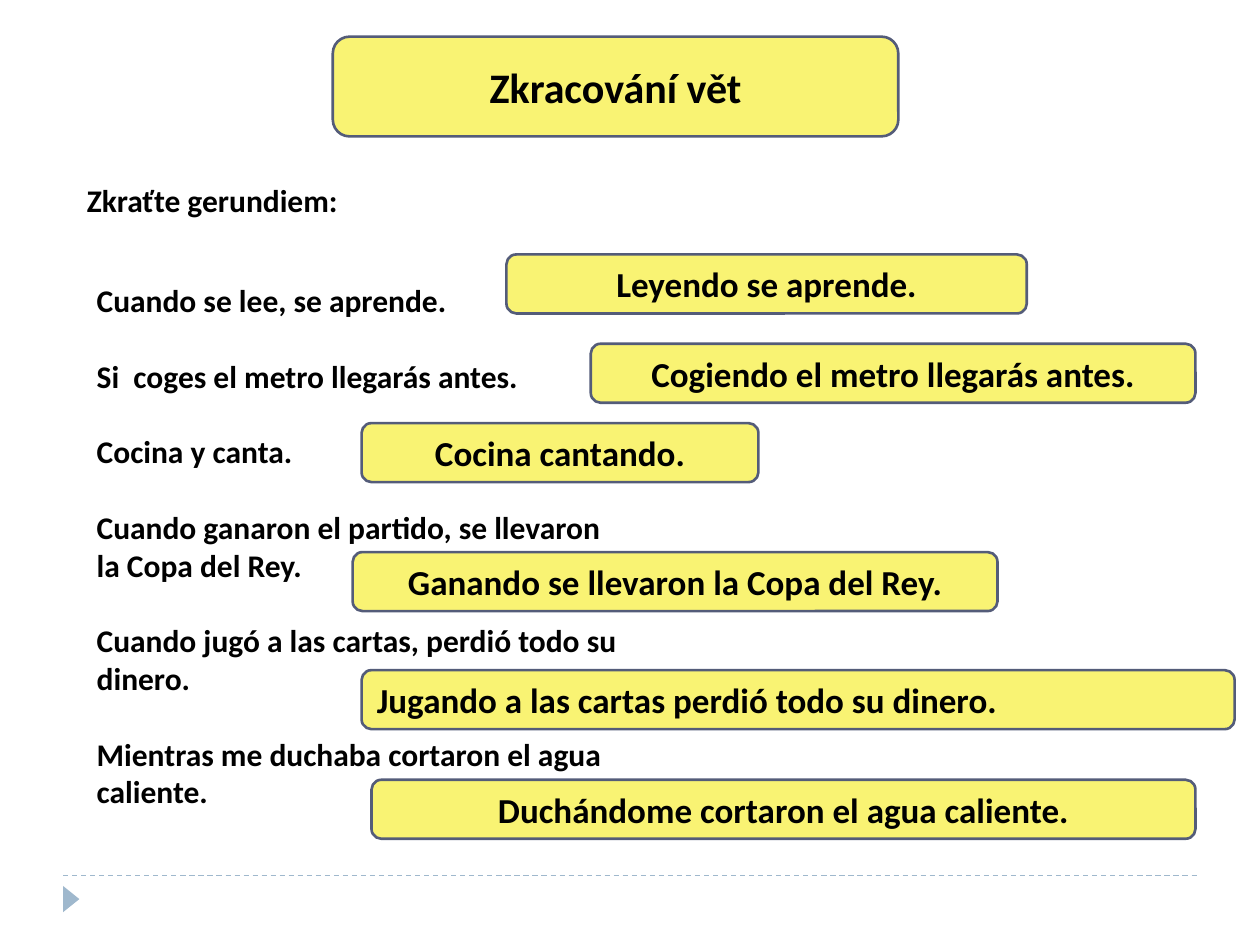
"""Build the slide on shortening Spanish sentences with the gerund."""
from lxml.etree import SubElement
from pptx import Presentation
from pptx.dml.color import RGBColor
from pptx.enum.dml import MSO_LINE
from pptx.enum.shapes import MSO_CONNECTOR, MSO_SHAPE
from pptx.enum.text import MSO_ANCHOR as Anchor, PP_ALIGN as Align
from pptx.oxml.ns import qn
from pptx.util import Cm, Pt


def color(hex_code):
    return RGBColor.from_string(hex_code)


def format_text(shape, size, alignment, anchor):
    frame = shape.text_frame
    frame.word_wrap = True
    frame.vertical_anchor = anchor
    for paragraph in frame.paragraphs:
        paragraph.alignment = alignment
        for run in paragraph.runs:
            run.font.name = "Calibri"
            run.font.size = Pt(size)
            run.font.bold = True
            run.font.color.rgb = color("000000")


presentation = Presentation()
presentation.slide_width, presentation.slide_height = Cm(25.4), Cm(19.05)
slide = presentation.slides.add_slide(presentation.slide_layouts[5])
shapes = slide.shapes

footer_line = shapes.add_connector(
    MSO_CONNECTOR.STRAIGHT, Cm(1.27), Cm(17.65), Cm(24.13), Cm(17.65))
footer_line.line.color.rgb = color("9FB8CD")
footer_line.line.width = Pt(0.75)
footer_line.line.dash_style = MSO_LINE.DASH
SubElement(footer_line._element.spPr, qn("a:effectLst"))

footer_arrow = shapes.add_shape(
    MSO_SHAPE.ISOSCELES_TRIANGLE, Cm(1.17), Cm(17.96), Cm(0.53), Cm(0.33))
footer_arrow.rotation = 90
footer_arrow.shadow.inherit = False
footer_arrow.fill.solid()
footer_arrow.fill.fore_color.rgb = color("9FB8CD")
footer_arrow.line.fill.background()

heading = shapes.add_textbox(Cm(1.5), Cm(3.53), Cm(6.5), Cm(1.02))
heading.text_frame.text = "Zkraťte gerundiem:"
format_text(heading, 18, Align.LEFT, Anchor.TOP)

sentences = [
    ["Cuando se lee, se aprende."],
    ["Si  coges el metro llegarás antes."],
    ["Cocina y canta."],
    ["Cuando ganaron el partido, se llevaron", "la Copa del Rey."],
    ["Cuando jugó a las cartas, perdió todo su", "dinero."],
    ["Mientras me duchaba cortaron el agua", "caliente."],
]
sentence_list = shapes.add_textbox(Cm(1.7), Cm(5.54), Cm(12.42), Cm(11.02))
sentence_frame = sentence_list.text_frame
sentence_frame.text = "\n".join(line for lines in sentences for line in lines)
first_lines = [lines[0] for lines in sentences[1:]]
for paragraph in sentence_frame.paragraphs:
    if paragraph.text in first_lines:
        paragraph.space_before = Pt(21.6)
format_text(sentence_list, 18, Align.LEFT, Anchor.TOP)

title_area = (6.71, 0.74, 11.4, 2.01)
boxes = [
    ("", *title_area, Align.CENTER),
    ("Leyendo se aprende.", 10.21, 5.13, 10.49, 1.19, Align.CENTER),
    ("Cogiendo el metro llegarás antes.", 11.91, 6.93, 12.19, 1.19, Align.CENTER),
    ("Cocina cantando.", 7.29, 8.53, 8, 1.19, Align.CENTER),
    ("Ganando se llevaron la Copa del Rey.", 7.11, 11.13, 13, 1.19, Align.CENTER),
    ("Jugando a las cartas perdió todo su dinero.", 7.29, 13.51, 17.6, 1.19, Align.LEFT),
    ("Duchándome cortaron el agua caliente.", 7.49, 15.72, 16.61, 1.19, Align.CENTER),
]
for text, left, top, width, height, alignment in boxes:
    box = shapes.add_shape(
        MSO_SHAPE.ROUNDED_RECTANGLE, Cm(left), Cm(top), Cm(width), Cm(height))
    box.shadow.inherit = False
    box.fill.solid()
    box.fill.fore_color.rgb = color("F9F373")
    box.line.color.rgb = color("545C79")
    box.line.width = Pt(1.5)
    box.text_frame.text = text
    format_text(box, 20, alignment, Anchor.MIDDLE)

title = shapes.title
title.left, title.top, title.width, title.height = map(Cm, title_area)
title.text_frame.text = "Zkracování vět"
format_text(title, 24, Align.CENTER, Anchor.MIDDLE)
shapes._spTree.append(title._element)

presentation.save("out.pptx")
